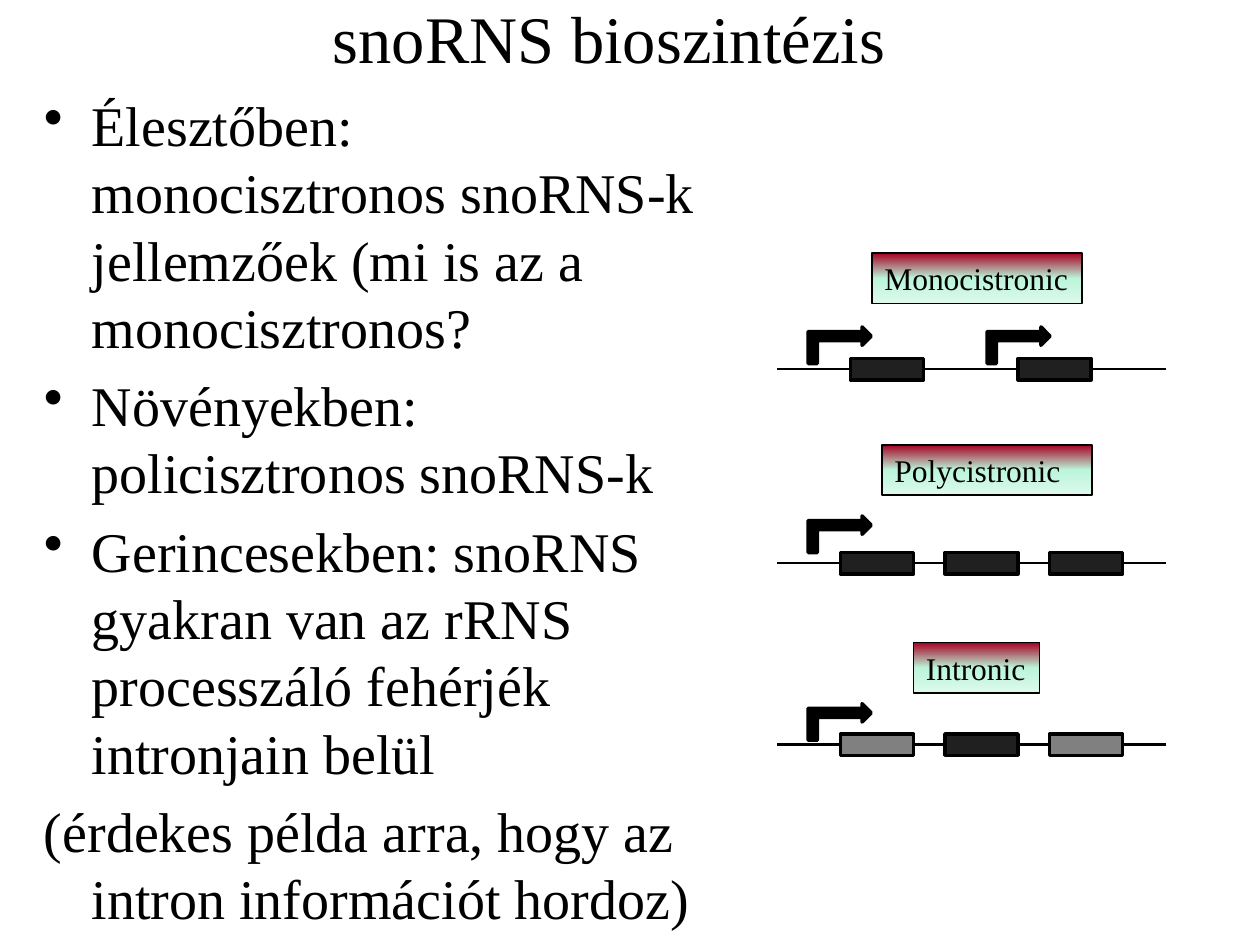
import copy
from dataclasses import dataclass

import pptx
import pptx.dml.color
import pptx.enum.shapes
import pptx.enum.text
import pptx.oxml.ns
import pptx.oxml.xmlchemy
import pptx.util

Inches = pptx.util.Inches
Pt = pptx.util.Pt
RGBColor = pptx.dml.color.RGBColor
MSO_SHAPE = pptx.enum.shapes.MSO_SHAPE
MSO_ANCHOR = pptx.enum.text.MSO_ANCHOR
PP_ALIGN = pptx.enum.text.PP_ALIGN
OxmlElement = pptx.oxml.xmlchemy.OxmlElement
qn = pptx.oxml.ns.qn

BLACK = RGBColor(0x00, 0x00, 0x00)
DARK = RGBColor(0x20, 0x20, 0x20)
GRAY = RGBColor(0x80, 0x80, 0x80)
RED = RGBColor(0xA5, 0x00, 0x21)
MINT = RGBColor(0xBA, 0xF5, 0xDA)
PALE = RGBColor(0xDE, 0xF9, 0xEC)

FONT = "Times New Roman"
LINE_LEFT, LINE_RIGHT = 6.17, 9.25
GENE_W, GENE_H = 0.58, 0.17
ARROW_W, ARROW_H = 0.29, 0.5
LABEL_H = 0.4
INDENT = 0.38

BULLETS = [
    "Élesztőben: monocisztronos snoRNS-k jellemzőek (mi is az a monocisztronos?",
    "Növényekben: policisztronos snoRNS-k",
    "Gerincesekben: snoRNS gyakran van az rRNS processzáló fehérjék intronjain belül",
]
REMARK = "(érdekes példa arra, hogy az intron információt hordoz)"


@dataclass
class Gene:
    left: float
    color: RGBColor = DARK


@dataclass
class Operon:
    label: str
    label_left: float
    label_top: float
    label_width: float
    axis: float
    arrow_top: float
    promoters: list[float]
    genes: list[Gene]


OPERONS = [
    Operon("Monocistronic", 6.92, 2.01, 1.67, 2.93, 2.49, [6.52, 7.94],
           [Gene(6.75), Gene(8.08)]),
    Operon("Polycistronic", 7, 3.53, 1.67, 4.47, 3.99, [6.52],
           [Gene(6.67), Gene(7.5), Gene(8.33)]),
    Operon("Intronic", 7.25, 5.1, 1, 5.91, 5.48, [6.52],
           [Gene(6.67, GRAY), Gene(7.5), Gene(8.33, GRAY)]),
]


def write(p, text: str, size: float) -> None:
    r = p.add_run()
    r.text = text
    for name, value in {"name": FONT, "size": Pt(size)}.items():
        setattr(r.font, name, value)
    r.font.color.rgb = BLACK


def place(sp, left: float, top: float, width: float, height: float) -> None:
    box = {"left": left, "top": top, "width": width, "height": height}
    for name, value in box.items():
        setattr(sp, name, Inches(value))


def add_outlined(slide, kind, left: float, top: float, width: float,
                 height: float, line_width: float):
    sp = slide.shapes.add_shape(kind, Inches(left), Inches(top),
                                Inches(width), Inches(height))
    sp.shadow.inherit = False
    sp.line.color.rgb = BLACK
    sp.line.width = Pt(line_width)
    return sp


def add_axis(slide, y: float) -> None:
    line = slide.shapes.add_connector(
        pptx.enum.shapes.MSO_CONNECTOR.STRAIGHT,
        Inches(LINE_LEFT), Inches(y), Inches(LINE_RIGHT), Inches(y))
    line.line.color.rgb = BLACK
    line.line.width = Pt(1.5)
    line.element.spPr.append(OxmlElement("a:effectLst"))


def add_gene(slide, gene: Gene, axis: float) -> None:
    sp = add_outlined(slide, MSO_SHAPE.RECTANGLE, gene.left,
                      axis - GENE_H / 2, GENE_W, GENE_H, 2)
    sp.fill.solid()
    sp.fill.fore_color.rgb = gene.color


def add_promoter(slide, left: float, top: float) -> None:
    sp = add_outlined(slide, MSO_SHAPE.BENT_UP_ARROW, left, top,
                      ARROW_W, ARROW_H, 2)
    sp.fill.solid()
    sp.fill.fore_color.rgb = BLACK
    sp.rotation = 90
    sp.element.spPr.find(qn("a:xfrm")).set("flipH", "1")


def fill_gradient(sp) -> None:
    """Shade from red at the top through mint to pale green."""
    sp.fill.gradient()
    sp.fill.gradient_angle = 270
    stops = sp.element.spPr.find(qn("a:gradFill")).find(qn("a:gsLst"))
    stops.append(copy.deepcopy(stops[-1]))
    colors = [(0, RED), (0.5, MINT), (1, PALE)]
    for stop, (position, color) in zip(sp.fill.gradient_stops, colors):
        stop.position = position
        stop.color.rgb = color


def add_label(slide, operon: Operon) -> None:
    sp = add_outlined(slide, MSO_SHAPE.RECTANGLE, operon.label_left,
                      operon.label_top, operon.label_width, LABEL_H, 1)
    fill_gradient(sp)
    tf = sp.text_frame
    tf.word_wrap = True
    tf.vertical_anchor = MSO_ANCHOR.TOP
    tf.paragraphs[0].alignment = PP_ALIGN.LEFT
    write(tf.paragraphs[0], operon.label, 18)


def add_operon(slide, operon: Operon) -> None:
    add_axis(slide, operon.axis)
    for gene in operon.genes:
        add_gene(slide, gene, operon.axis)
    for left in operon.promoters:
        add_promoter(slide, left, operon.arrow_top)
    add_label(slide, operon)


def add_title(slide) -> None:
    title = slide.shapes.title
    place(title, 0, -0.33, 9.67, 1.25)
    tf = title.text_frame
    tf.vertical_anchor = MSO_ANCHOR.MIDDLE
    tf.paragraphs[0].alignment = PP_ALIGN.CENTER
    write(tf.paragraphs[0], "snoRNS bioszintézis", 38)


def add_body(slide) -> None:
    tf = slide.shapes.add_textbox(Inches(0.25), Inches(0.67), Inches(5.42),
                                  Inches(5.58)).text_frame
    tf.word_wrap = True
    for i, text in enumerate([*BULLETS, REMARK]):
        p = tf.paragraphs[0] if i == 0 else tf.add_paragraph()
        p.space_before = Pt(6.4)
        write(p, text, 32)
        pPr = p._p.get_or_add_pPr()
        pPr.set("marL", str(Inches(INDENT)))
        pPr.set("indent", str(-Inches(INDENT)))
        if text in BULLETS:
            bullet = OxmlElement("a:buChar")
            bullet.set("char", "•")
            pPr.append(bullet)


def main() -> None:
    prs = pptx.Presentation()
    prs.slide_width, prs.slide_height = Inches(10), Inches(7.5)
    slide = prs.slides.add_slide(prs.slide_layouts[5])
    add_title(slide)
    add_body(slide)
    for operon in OPERONS:
        add_operon(slide, operon)
    prs.save("out.pptx")


if __name__ == "__main__":
    main()
